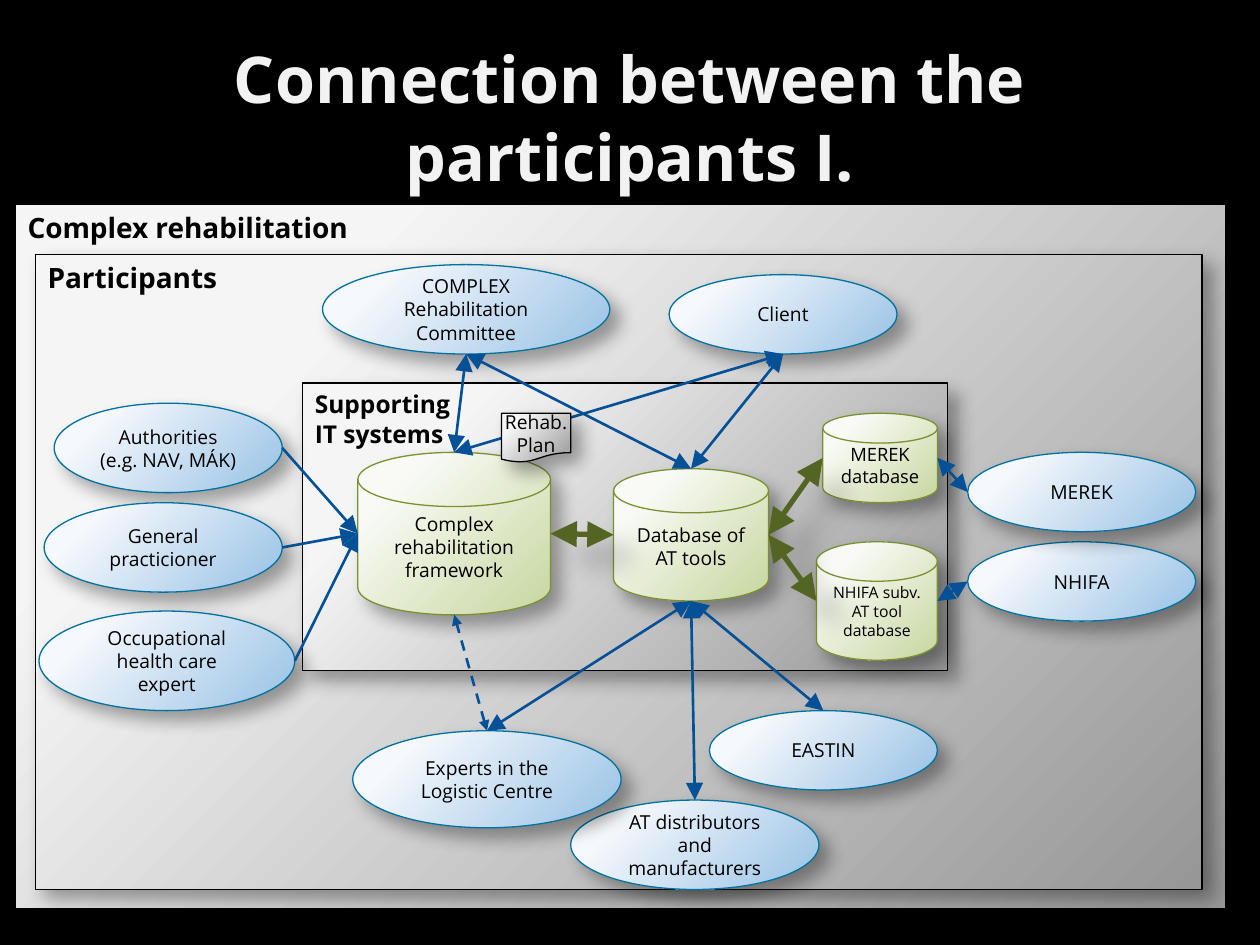
from lxml.etree import SubElement
from pptx import Presentation
from pptx.dml.color import RGBColor
from pptx.enum.dml import MSO_LINE
from pptx.enum.shapes import MSO_CONNECTOR, MSO_SHAPE
from pptx.enum.text import MSO_ANCHOR, PP_ALIGN
from pptx.oxml.ns import qn
from pptx.util import Inches, Pt

FONT = "Open Sans"
TITLE = "Connection between the participants I."

# kind: preset, light colour, dark colour, outline
KINDS = {
    "panel": (MSO_SHAPE.RECTANGLE, "F5F5F5", "979797", "000000"),
    "actor": (MSO_SHAPE.OVAL, "F5F8FC", "97C1E5", "00729E"),
    "store": (MSO_SHAPE.FLOWCHART_MAGNETIC_DISK, "F9FAF5", "C6D79F", "7A9131"),
    "note": (MSO_SHAPE.FLOWCHART_DOCUMENT, "F5F5F5", "979797", "000000"),
}

# name: kind, text, text size, (left, top, width, height) in inches, back to front
NODES = {
    "rehabilitation": ("panel", "Complex rehabilitation", 16, (0.12, 1.62, 9.61, 5.59)),
    "participants": ("panel", "Participants", 16, (0.28, 2.02, 9.26, 5.04)),
    "committee": ("actor", "COMPLEX\nRehabilitation Committee", 11, (2.56, 2.1, 2.28, 0.71)),
    "systems": ("panel", "Supporting\nIT systems", 14, (2.4, 3.04, 5.12, 2.28)),
    "framework": ("store", "Complex rehabilitation framework", 11, (2.84, 3.59, 1.53, 1.29)),
    "tools": ("store", "Database of AT tools", 11, (4.87, 3.72, 1.23, 1.05)),
    "nhifa_store": ("store", "NHIFA subv. AT tool database", 9, (6.48, 4.3, 0.96, 0.94)),
    "merek_store": ("store", "MEREK database", 10.5, (6.53, 3.28, 0.91, 0.71)),
    "client": ("actor", "Client", 11, (5.31, 2.18, 1.81, 0.63)),
    "eastin": ("actor", "EASTIN", 11, (5.63, 5.64, 1.81, 0.63)),
    "distributors": ("actor", "AT distributors and manufacturers", 11, (4.53, 6.35, 1.97, 0.71)),
    "experts": ("actor", "Experts in the Logistic Centre", 11, (2.8, 5.8, 2.13, 0.77)),
    "authorities": ("actor", "Authorities (e.g. NAV, MÁK)", 11, (0.43, 3.2, 1.81, 0.71)),
    "practitioner": ("actor", "General practicioner", 11, (0.35, 3.99, 1.89, 0.71)),
    "occupational": ("actor", "Occupational health care expert", 11, (0.31, 4.85, 2.03, 0.79)),
    "nhifa": ("actor", "NHIFA", 11, (7.68, 4.3, 1.81, 0.63)),
    "merek": ("actor", "MEREK", 11, (7.68, 3.59, 1.81, 0.63)),
}
PLAN = ("note", "Rehab. Plan", 11, (3.98, 3.28, 0.55, 0.39))

# style: colour, width, arrow at start, arrow size, dashed, shadow
STYLES = {
    "data": ("546422", 3, True, "lg", False, True),
    "input": ("045197", 1.5, False, "lg", False, False),
    "exchange": ("045197", 1.5, True, "lg", False, False),
    "advice": ("045197", 1.5, True, "med", True, False),
}

# style, start node, start side, end node, end side
LINKS = [
    ("data", "tools", "right", "merek_store", "left"),
    ("data", "tools", "right", "nhifa_store", "left"),
    ("data", "framework", "right", "tools", "left"),
    ("input", "authorities", "right", "framework", "left"),
    ("input", "occupational", "right", "framework", "left"),
    ("input", "practitioner", "right", "framework", "left"),
    ("exchange", "committee", "bottom", "framework", "top"),
    ("exchange", "committee", "bottom", "tools", "top"),
    ("exchange", "client", "bottom", "framework", "top"),
    ("exchange", "client", "bottom", "tools", "top"),
    ("exchange", "eastin", "top", "tools", "bottom"),
    ("exchange", "distributors", "top", "tools", "bottom"),
    ("exchange", "experts", "top", "tools", "bottom"),
    ("exchange", "nhifa", "left", "nhifa_store", "right"),
    ("exchange", "merek", "left", "merek_store", "right"),
    ("advice", "experts", "top", "framework", "bottom"),
]
SIDES = {"top": (0.5, 0), "bottom": (0.5, 1), "left": (0, 0.5), "right": (1, 0.5)}


def color(value):
    return RGBColor.from_string(value)


def add_xml(parent, tag, **attributes):
    return SubElement(parent, qn(tag), {key: str(value) for key, value in attributes.items()})


def set_shadow(shape, blur=0, distance=0, opacity=0):
    """Give the shape a black shadow to the lower right, or none at opacity 0."""
    effects = add_xml(shape._element.spPr, "a:effectLst")
    if opacity:
        shadow = add_xml(effects, "a:outerShdw", blurRad=Pt(blur), dist=Pt(distance),
                         dir=45 * 60000, algn="tl", rotWithShape=0)
        black = add_xml(shadow, "a:srgbClr", val="000000")
        add_xml(black, "a:alpha", val=opacity * 1000)


def set_gradient(shape, light, dark):
    """Fill from light at the top left to dark at the bottom right, along circles."""
    shape.fill.gradient()
    for stop, position, value in zip(shape.fill.gradient_stops, (0.2, 1), (light, dark)):
        stop.position = position
        stop.color.rgb = color(value)
    gradient = shape._element.spPr.find(qn("a:gradFill"))
    gradient.remove(gradient.find(qn("a:lin")))
    circle = add_xml(gradient, "a:path", path="circle")
    add_xml(circle, "a:fillToRect", l=-15000, t=-15000, r=115000, b=115000)


def format_text(frame, size, value, bold, align):
    for para in frame.paragraphs:
        para.alignment = align
        for span in para.runs:
            span.font.name = FONT
            span.font.size = Pt(size)
            span.font.bold = bold
            span.font.color.rgb = color(value)


def add_node(page, kind, text, size, area):
    preset, light, dark, outline = KINDS[kind]
    box = page.shapes.add_shape(preset, *map(Inches, area))
    set_gradient(box, light, dark)
    box.line.color.rgb = color(outline)
    box.line.width = Pt(0.75)
    set_shadow(box, 10.2, 8, 35)
    frame = box.text_frame
    frame.word_wrap = True
    frame.text = text
    panel = kind == "panel"
    frame.vertical_anchor = MSO_ANCHOR.TOP if panel else MSO_ANCHOR.MIDDLE
    if kind == "note":
        frame.margin_left = frame.margin_right = 0
        frame.margin_top = frame.margin_bottom = Inches(0.04)
    format_text(frame, size, "000000", panel, PP_ALIGN.LEFT if panel else PP_ALIGN.CENTER)
    return box


def side_point(box, side):
    across, down = SIDES[side]
    return int(box.left + across * box.width), int(box.top + down * box.height)


def add_link(page, style, start, end):
    value, width, both_ways, arrow, dashed, shadowed = STYLES[style]
    link = page.shapes.add_connector(MSO_CONNECTOR.STRAIGHT, *start, *end)
    link.line.color.rgb = color(value)
    link.line.width = Pt(width)
    if dashed:
        link.line.dash_style = MSO_LINE.DASH
    outline = link._element.spPr.find(qn("a:ln"))
    for tag in ("a:headEnd", "a:tailEnd") if both_ways else ("a:tailEnd",):
        add_xml(outline, tag, type="triangle", w=arrow, len=arrow)
    if shadowed:
        set_shadow(link, 15, 18, 26)
    else:
        set_shadow(link)


def main():
    deck = Presentation()
    deck.slide_width, deck.slide_height = Inches(10), Inches(7.5)
    page = deck.slides.add_slide(deck.slide_layouts[5])
    page.background.fill.solid()
    page.background.fill.fore_color.rgb = color("000000")

    title = page.shapes.title
    title.left, title.top, title.width, title.height = map(Inches, (0.5, 0.3, 9, 1.25))
    title.text_frame.text = TITLE
    title.text_frame.vertical_anchor = MSO_ANCHOR.MIDDLE
    format_text(title.text_frame, 36.9, "F2F2F2", True, PP_ALIGN.CENTER)

    boxes = {name: add_node(page, *node) for name, node in NODES.items()}
    for style, start, start_side, end, end_side in LINKS:
        add_link(page, style, side_point(boxes[start], start_side),
                 side_point(boxes[end], end_side))
    add_node(page, *PLAN)
    deck.save("out.pptx")


if __name__ == "__main__":
    main()
